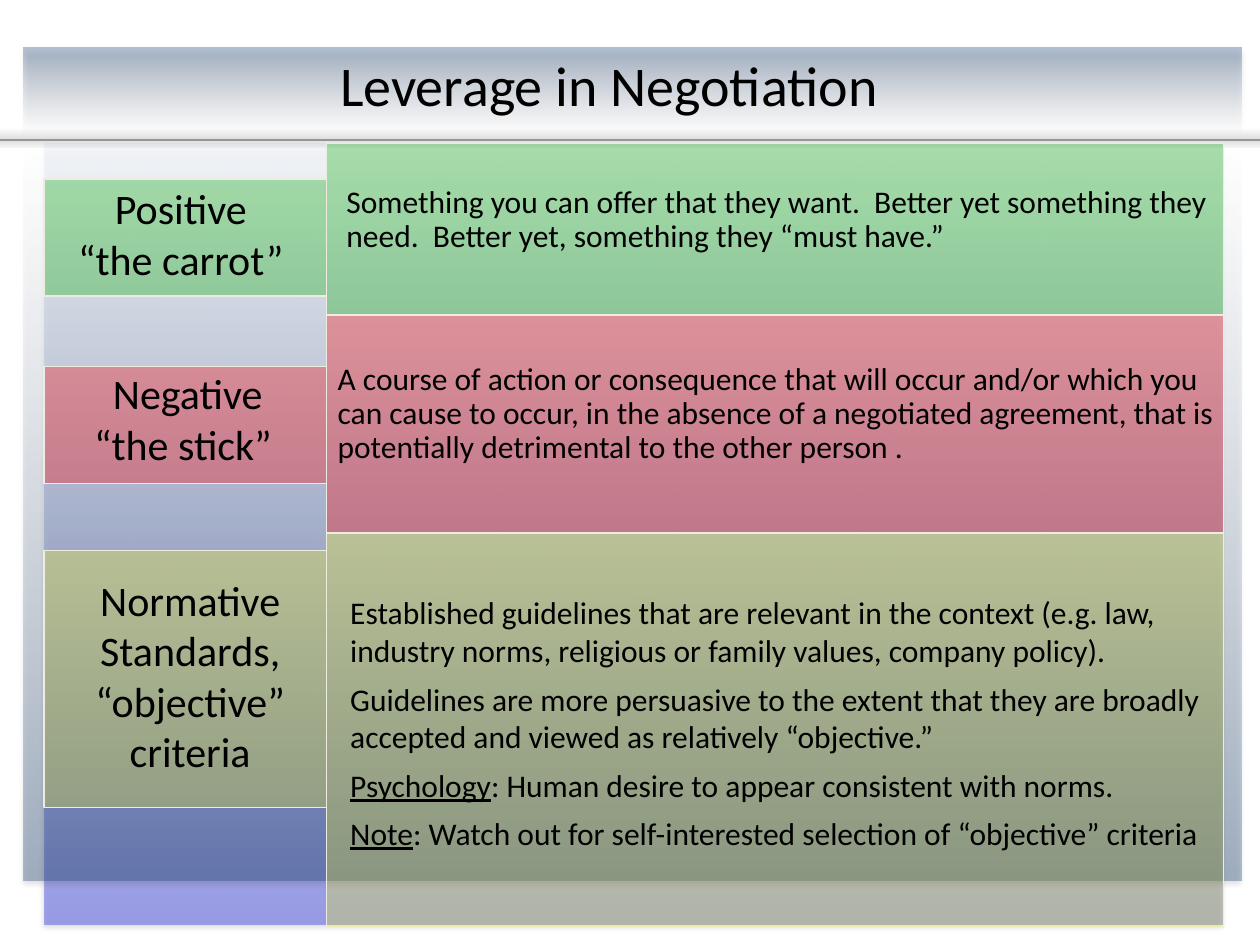
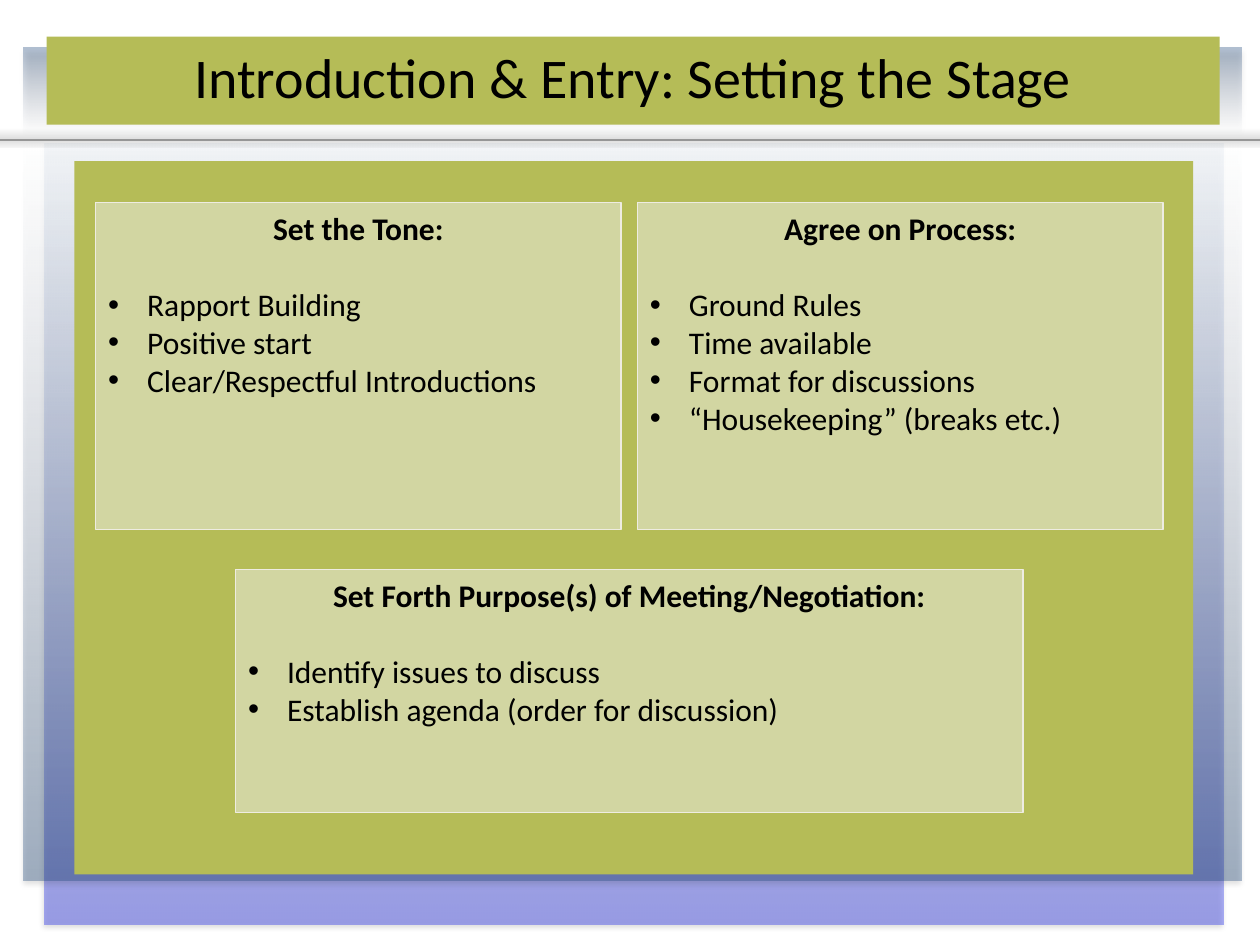
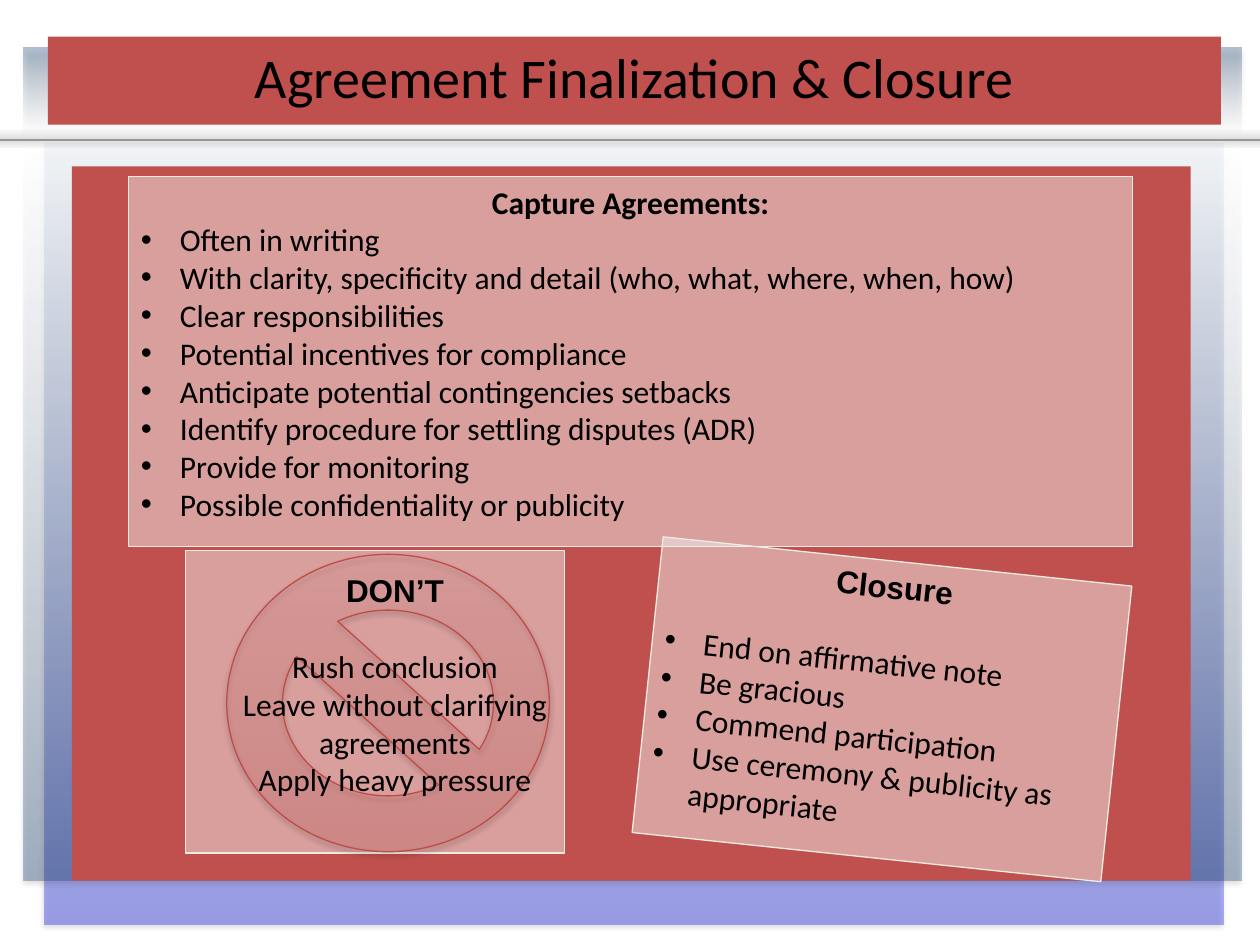
from pptx import Presentation
from pptx.dml.color import RGBColor
from pptx.enum.shapes import MSO_CONNECTOR, MSO_SHAPE
from pptx.enum.text import MSO_ANCHOR, MSO_AUTO_SIZE, PP_ALIGN
from pptx.oxml import parse_xml
from pptx.oxml.ns import nsdecls, qn
from pptx.util import Inches, Pt

BLACK, GREY, CREAM, PALE = "000000", "969696", "EEECE1", "F2F2F2"
GREEN, RED, YELLOW = "00AA00", "FF0000", "FFFF00"
OLIVE, BRICK = "B5BC57", "C0504D"
NAVY_FADE = [("1F497D", 35), ("7B869F", 0)]
BLUE_FADE = [("2932EF", 39), ("4F81BD", 5)]
ROSE_FADE = [("D1403C", 16), ("FFA6A5", 16)]
FONT, TITLE_SIZE, LABEL_SIZE, BODY_SIZE = "Calibri", 32, 24, 18
BULLET_INDENT = 0.31
BLANK_LINE = 22


def rgb(color):
    return RGBColor.from_string(color)


def set_alpha(sp, *percents):
    """Give the first colours of the shape, in order, these opacities."""
    colors = list(sp.element.spPr.iter(qn("a:srgbClr")))
    for color, percent in zip(colors, percents):
        color.append(parse_xml(
            f'<a:alpha {nsdecls("a")} val="{percent * 1000}"/>'))


def add_shadow(sp, alpha, blur, dist, angle):
    sp.element.spPr.append(parse_xml(
        f'<a:effectLst {nsdecls("a")}><a:outerShdw blurRad="{Pt(blur)}" '
        f'dist="{Pt(dist)}" dir="{angle * 60000}" rotWithShape="0">'
        f'<a:srgbClr val="{BLACK}"><a:alpha val="{alpha * 1000}"/></a:srgbClr>'
        '</a:outerShdw></a:effectLst>'))


class Deck:
    def __init__(self):
        self.prs = Presentation()
        self.prs.slide_width, self.prs.slide_height = Inches(10), Inches(7.5)
        self.s = None

    def slide(self, title, box, band=None):
        self.s = self.prs.slides.add_slide(self.prs.slide_layouts[5])
        self.backdrop()
        sp = self.s.shapes.title
        self.s.shapes.element.append(sp.element)
        sp.left, sp.top, sp.width, sp.height = map(Inches, box)
        if band:
            sp.fill.solid()
            sp.fill.fore_color.rgb = rgb(band)
        tf = self.frame(sp, MSO_ANCHOR.MIDDLE, inset=0)
        self.para(tf, title, TITLE_SIZE, align=PP_ALIGN.CENTER, spacing=0.9)

    def backdrop(self):
        self.fade((0.35, 1.14, 9.36, 6.2), BLUE_FADE)
        self.fade((0.19, 1.11, 9.66, 5.88), NAVY_FADE)
        self.fade((0.19, 0.38, 9.66, 0.67), NAVY_FADE, angle=270)
        rule = self.s.shapes.add_connector(
            MSO_CONNECTOR.STRAIGHT, Inches(10.23), Inches(1.11),
            Inches(-0.19), Inches(1.11))
        rule.line.color.rgb = rgb(GREY)
        rule.line.width = Pt(1)
        add_shadow(rule, 55, 5, 1, 270)

    def shape(self, box, kind=MSO_SHAPE.RECTANGLE, line=None):
        sp = self.s.shapes.add_shape(kind, *map(Inches, box))
        if line:
            sp.line.color.rgb = rgb(line)
            sp.line.width = Pt(0.75)
        else:
            sp.line.fill.background()
        return sp

    def fade(self, box, stops, angle=90, kind=MSO_SHAPE.RECTANGLE, line=None):
        """Add a shape whose gradient starts at the bottom (90) or top (270)."""
        sp = self.shape(box, kind, line)
        sp.fill.gradient()
        sp.fill.gradient_angle = angle
        for stop, (color, _) in zip(sp.fill.gradient_stops, stops):
            stop.color.rgb = rgb(color)
        set_alpha(sp, *[alpha for _, alpha in stops])
        return sp

    def rect(self, box, color, alpha=None, line=None):
        sp = self.shape(box, line=line)
        sp.shadow.inherit = False
        sp.fill.solid()
        sp.fill.fore_color.rgb = rgb(color)
        if alpha:
            set_alpha(sp, alpha)
        return sp

    def frame(self, sp, anchor=MSO_ANCHOR.TOP, inset=None):
        tf = sp.text_frame
        tf.word_wrap = True
        tf.auto_size = MSO_AUTO_SIZE.NONE
        tf.vertical_anchor = anchor
        if inset is not None:
            tf.margin_left = tf.margin_right = Inches(inset)
            tf.margin_top = tf.margin_bottom = Inches(inset)
        return tf

    def text_box(self, box, anchor=MSO_ANCHOR.TOP, inset=None):
        return self.frame(self.s.shapes.add_textbox(*map(Inches, box)),
                          anchor, inset)

    def para(self, tf, text, size=BODY_SIZE, align=PP_ALIGN.LEFT, bold=False,
             font=FONT, spacing=None, after=0, bullet=False, lead=""):
        """Add a paragraph; lead is an underlined opening."""
        p = tf.paragraphs[0] if not tf.paragraphs[0].runs else tf.add_paragraph()
        if bullet:
            pPr = p._p.get_or_add_pPr()
            pPr.set("marL", str(Inches(BULLET_INDENT)))
            pPr.set("indent", str(-Inches(BULLET_INDENT)))
            for tag in ('buFont typeface="Arial"', 'buChar char="•"'):
                pPr.append(parse_xml(f'<a:{tag} {nsdecls("a")}/>'))
        p.alignment = align
        p.space_before, p.space_after = Pt(0), Pt(after)
        if spacing:
            p.line_spacing = spacing
        for part, underline in ((lead, True), (text, False)):
            if part:
                r = p.add_run()
                r.text = part
                r.font.name, r.font.size = font, Pt(size)
                r.font.bold, r.font.underline = bold, underline
                r.font.color.rgb = rgb(BLACK)

    def card(self, box, heading, items, gap=BLANK_LINE, font=FONT, rotation=0):
        sp = self.rect(box, PALE, 49, CREAM)
        sp.rotation = rotation
        tf = self.frame(sp)
        self.para(tf, heading, align=PP_ALIGN.CENTER, bold=True, font=font,
                  after=gap)
        for item in items:
            self.para(tf, item, bullet=True)


def leverage(deck):
    deck.slide("Leverage in Negotiation", (0.58, 0.41, 8.51, 0.59))
    for top, height, color, alpha in ((1.14, 1.36, GREEN, 31),
                                      (2.5, 1.73, RED, 31),
                                      (4.23, 3.13, YELLOW, 25)):
        deck.rect((2.59, top, 7.12, height), color, alpha, CREAM)
    for top, height, color, alpha in ((1.42, 0.93, GREEN, 31),
                                      (2.91, 0.93, RED, 31),
                                      (4.37, 2.04, YELLOW, 25)):
        deck.rect((0.35, top, 2.24, height), color, alpha, CREAM)

    for box, lines in (
            ((0.28, 1.4, 2.31, 0.91), ("Positive", "“the carrot”")),
            ((0.37, 2.87, 2.24, 0.91), ("Negative", "“the stick” ")),
            ((0.28, 4.51, 2.46, 1.72),
             ("Normative", "Standards, “objective” criteria"))):
        tf = deck.text_box(box)
        for line in lines:
            deck.para(tf, line, LABEL_SIZE, PP_ALIGN.CENTER)

    tf = deck.text_box((2.75, 1.48, 6.96, 0.55), inset=0)
    deck.para(tf, "Something you can offer that they want.  Better yet something "
              "they need.  Better yet, something they “must have.”", spacing=0.9)
    tf = deck.text_box((2.68, 2.88, 7.04, 0.82), MSO_ANCHOR.MIDDLE, 0)
    deck.para(tf, "A course of action or consequence that will occur and/or which "
              "you can cause to occur, in the absence of a negotiated agreement, "
              "that is potentially detrimental to the other person .", spacing=0.9)
    tf = deck.text_box((2.78, 4.7, 6.94, 2.07), MSO_ANCHOR.MIDDLE, 0)
    for lead, text in (
            ("", "Established guidelines that are relevant in the context (e.g. "
                 "law, industry norms, religious or family values, company "
                 "policy)."),
            ("", "Guidelines are more persuasive to the extent that they are "
                 "broadly accepted and viewed as relatively “objective.”"),
            ("Psychology", ": Human desire to appear consistent with norms."),
            ("Note", ": Watch out for self-interested selection of “objective” "
                     "criteria")):
        deck.para(tf, text, lead=lead, after=6)


def introduction(deck):
    deck.slide("Introduction & Entry: Setting the Stage",
               (0.37, 0.29, 9.31, 0.7), OLIVE)
    deck.rect((0.59, 1.28, 8.88, 5.66), OLIVE)
    deck.card((1.87, 4.52, 6.25, 1.93),
              "Set Forth Purpose(s) of Meeting/Negotiation:",
              ["Identify issues to discuss",
               "Establish agenda (order for discussion)"])
    deck.card((0.76, 1.61, 4.17, 2.59), "Set the Tone:",
              ["Rapport Building", "Positive start",
               "Clear/Respectful Introductions"])
    deck.card((5.06, 1.61, 4.17, 2.59), "Agree on Process:",
              ["Ground Rules", "Time available", "Format for discussions",
               "“Housekeeping” (breaks etc.)"])


def closure(deck):
    deck.slide("Agreement Finalization & Closure",
               (0.38, 0.29, 9.31, 0.7), BRICK)
    deck.rect((0.57, 1.32, 8.88, 5.67), BRICK)
    deck.card((1.02, 1.4, 7.97, 2.94), "Capture Agreements:",
              ["Often in writing",
               "With clarity, specificity and detail (who, what, where, when, how)",
               "Clear responsibilities",
               "Potential incentives for compliance",
               "Anticipate potential contingencies setbacks",
               "Identify procedure for settling disputes (ADR)",
               "Provide for monitoring",
               "Possible confidentiality or publicity"], gap=0)
    deck.card((5.13, 4.45, 3.74, 2.36), "Closure",
              ["End on affirmative note", "Be gracious",
               "Commend participation",
               "Use ceremony & publicity as appropriate"],
              font="Arial", rotation=6)

    deck.rect((1.47, 4.37, 3.01, 2.4), PALE, 49, CREAM)
    sign = deck.fade((1.8, 4.4, 2.56, 2.36), ROSE_FADE,
                     kind=MSO_SHAPE.NO_SYMBOL, line="BF4C48")
    add_shadow(sign, 35, 3.1, 1.8, 90)
    tf = deck.text_box((1.43, 4.48, 3.41, 1.92))
    deck.para(tf, "DON’T", align=PP_ALIGN.CENTER, bold=True, font="Arial",
              after=BLANK_LINE)
    for line in ("Rush conclusion", "Leave without clarifying agreements",
                 "Apply heavy pressure"):
        deck.para(tf, line, align=PP_ALIGN.CENTER)


def main():
    deck = Deck()
    for build in (leverage, introduction, closure):
        build(deck)
    deck.prs.save("out.pptx")


if __name__ == "__main__":
    main()
